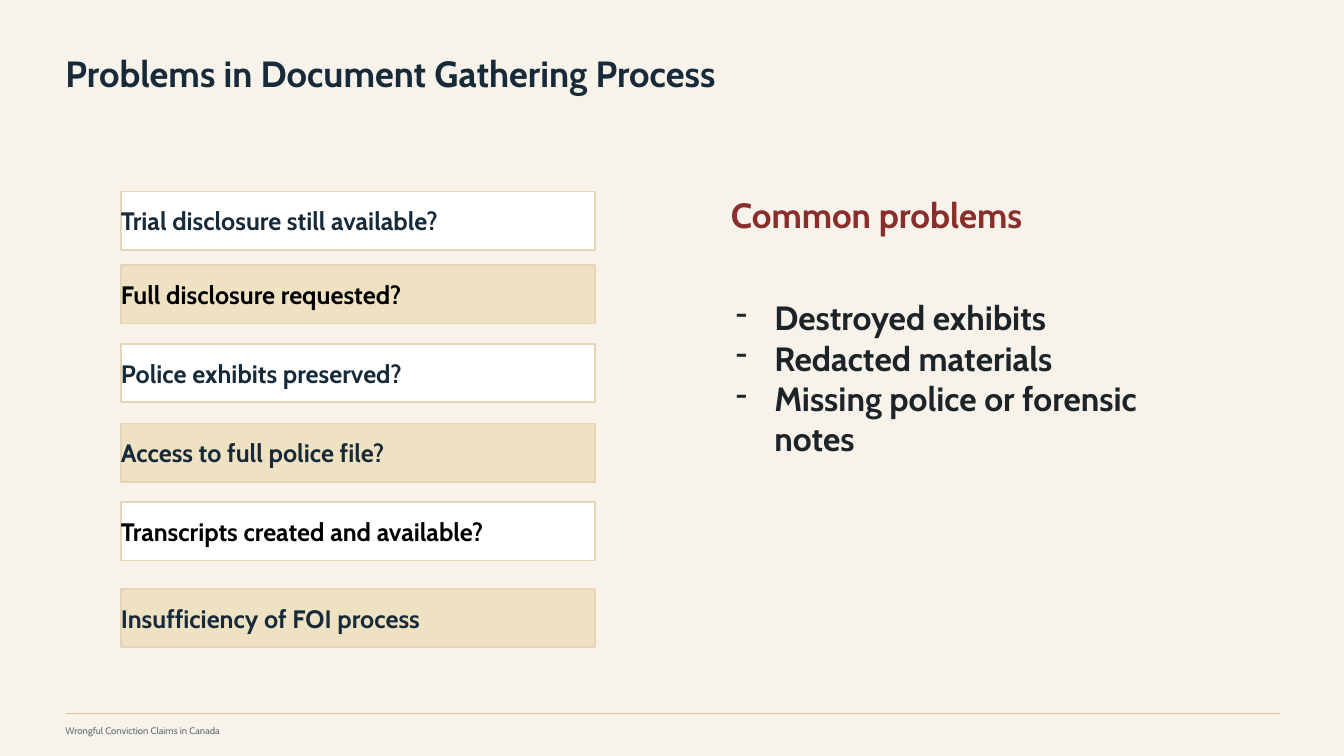
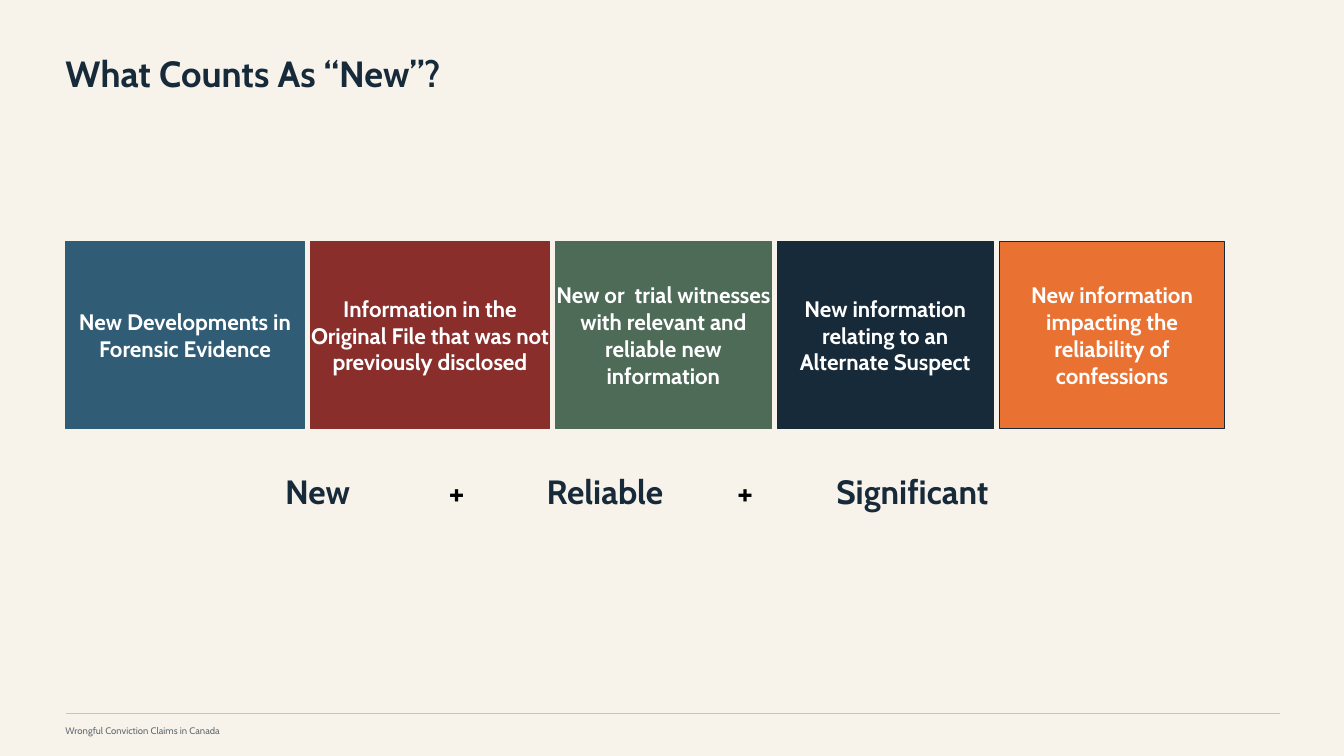
from lxml import etree
from pptx import Presentation
from pptx.dml.color import RGBColor
from pptx.enum.shapes import MSO_CONNECTOR, MSO_SHAPE
from pptx.enum.text import MSO_ANCHOR, PP_ALIGN
from pptx.oxml.ns import qn
from pptx.util import Inches, Pt

RECTANGLE = MSO_SHAPE.RECTANGLE
STRAIGHT = MSO_CONNECTOR.STRAIGHT
MIDDLE = MSO_ANCHOR.MIDDLE
LEFT, CENTER = PP_ALIGN.LEFT, PP_ALIGN.CENTER

CREAM = RGBColor(0xF7, 0xF2, 0xEA)
SAND = RGBColor(0xEF, 0xE2, 0xC2)
SAND_EDGE = RGBColor(0xE4, 0xD4, 0xB8)
RULE = RGBColor(0xD7, 0xC4, 0x9E)
NAVY = RGBColor(0x17, 0x2A, 0x3A)
BLUE = RGBColor(0x31, 0x5C, 0x75)
RED = RGBColor(0x8A, 0x2E, 0x2C)
GREEN = RGBColor(0x4E, 0x6B, 0x58)
ORANGE = RGBColor(0xE9, 0x71, 0x32)
INK = RGBColor(0x1D, 0x24, 0x28)
GRAY = RGBColor(0x5F, 0x6B, 0x70)
BLACK = RGBColor(0, 0, 0)
WHITE = RGBColor(0xFF, 0xFF, 0xFF)

FONT = "Cabin"
MARGIN = 0.65


def write(shape, lines, size, color, bold=True, align=LEFT):
    """Fill a shape with one paragraph per line, without insets."""
    frame = shape.text_frame
    frame.word_wrap = True
    frame.vertical_anchor = MIDDLE
    frame.margin_left = frame.margin_right = 0
    frame.margin_top = frame.margin_bottom = 0
    for index, line in enumerate(lines):
        paragraph = frame.add_paragraph() if index else frame.paragraphs[0]
        paragraph.alignment = align
        run = paragraph.add_run()
        run.text = line
        run.font.name = FONT
        run.font.size = Pt(size)
        run.font.bold = bold
        run.font.color.rgb = color
    return frame


def add_text(slide, box, lines, size, color, **style):
    textbox = slide.shapes.add_textbox(*map(Inches, box))
    return write(textbox, lines, size, color, **style)


def add_panel(slide, box, fill, edge, edge_width):
    panel = slide.shapes.add_shape(RECTANGLE, *map(Inches, box))
    panel.shadow.inherit = False
    panel.fill.solid()
    panel.fill.fore_color.rgb = fill
    panel.line.color.rgb = edge
    panel.line.width = Pt(edge_width)
    return panel


def add_dash(paragraph):
    """Give a paragraph a hanging dash."""
    properties = paragraph._p.get_or_add_pPr()
    indent = Inches(0.38)
    properties.set("marL", str(indent))
    properties.set("indent", str(-indent))
    etree.SubElement(properties, qn("a:buChar")).set("char", "-")


def new_slide(deck, title):
    """Add a slide with the shared background, footer and title."""
    slide = deck.slides.add_slide(deck.slide_layouts[6])
    slide.background.fill.solid()
    slide.background.fill.fore_color.rgb = CREAM
    rule = slide.shapes.add_connector(
        STRAIGHT, Inches(MARGIN), Inches(7.08), Inches(12.7), Inches(7.08))
    rule.line.color.rgb = RULE
    rule.line.width = Pt(1)
    etree.SubElement(rule._element.spPr, qn("a:effectLst"))
    add_text(slide, (MARGIN, 7.15, 5.8, 0.2),
             ["Wrongful Conviction Claims in Canada"], 6.8, GRAY, bold=False)
    add_text(slide, (MARGIN, 0.45, 7.8, 0.55), [title], 26, NAVY)
    return slide


def add_questions(slide, left, top, width, questions):
    """Stack question bars with alternating fills; offsets run from top."""
    for index, (offset, question, color) in enumerate(questions):
        bar = add_panel(slide, (left, top + offset, width, 0.58),
                        SAND if index % 2 else WHITE, SAND_EDGE, 1.2)
        write(bar, [question], 18, color)


def add_problems(slide, left, top, heading, problems):
    add_text(slide, (left, top, 3.6, 0.45), [heading], 25, RED)
    frame = add_text(slide, (left + 0.05, top + 0.85, 4.2, 2),
                     problems, 24, INK)
    for paragraph in frame.paragraphs:
        add_dash(paragraph)


def add_categories(slide, left, top, height, gap, categories):
    """Lay category cards in a row, each with its own width."""
    for width, fill, edge, label in categories:
        card = add_panel(slide, (left, top, width, height), fill, edge, 0.75)
        write(card, [label], 16, WHITE, align=CENTER)
        left += width + gap


def add_formula(slide, left, top, terms):
    """Write the terms on one line; offsets run from left."""
    for offset, width, term in terms:
        size, color = (25, BLACK) if term == "+" else (24, NAVY)
        add_text(slide, (left + offset, top, width, 0.45), [term],
                 size, color, align=CENTER)


def build_problems_slide(deck):
    slide = new_slide(deck, "Problems in Document Gathering Process")
    add_questions(slide, 1.2, 1.9, 4.7, [
        (0, "Trial disclosure still available?", NAVY),
        (0.73, "Full disclosure requested?", BLACK),
        (1.51, "Police exhibits preserved?", NAVY),
        (2.3, "Access to full police file?", NAVY),
        (3.08, "Transcripts created and available?", BLACK),
        (3.94, "Insufficiency of FOI process", NAVY),
    ])
    add_problems(slide, 7.25, 1.9, "Common problems", [
        "Destroyed exhibits",
        "Redacted materials",
        "Missing police or forensic notes",
    ])


def build_new_slide(deck):
    slide = new_slide(deck, "What Counts As “New”?")
    add_categories(slide, MARGIN, 2.4, 1.85, 0.06, [
        (2.37, BLUE, BLUE, "New Developments in Forensic Evidence"),
        (2.37, RED, RED, "Information in the Original File that was not "
                         "previously disclosed"),
        (2.14, GREEN, GREEN, "New or  trial witnesses with relevant and "
                             "reliable new information"),
        (2.14, NAVY, NAVY, "New information relating to an Alternate Suspect"),
        (2.24, ORANGE, NAVY, "New information impacting the reliability of "
                             "confessions"),
    ])
    add_formula(slide, 2.25, 4.65, [
        (0, 1.8, "New"),
        (2.03, 0.5, "+"),
        (2.7, 2.1, "Reliable"),
        (4.89, 0.5, "+"),
        (5.5, 2.6, "Significant"),
    ])


def main():
    deck = Presentation()
    deck.slide_width = Inches(13.33)
    deck.slide_height = Inches(7.5)
    build_problems_slide(deck)
    build_new_slide(deck)
    deck.save("out.pptx")


if __name__ == "__main__":
    main()
